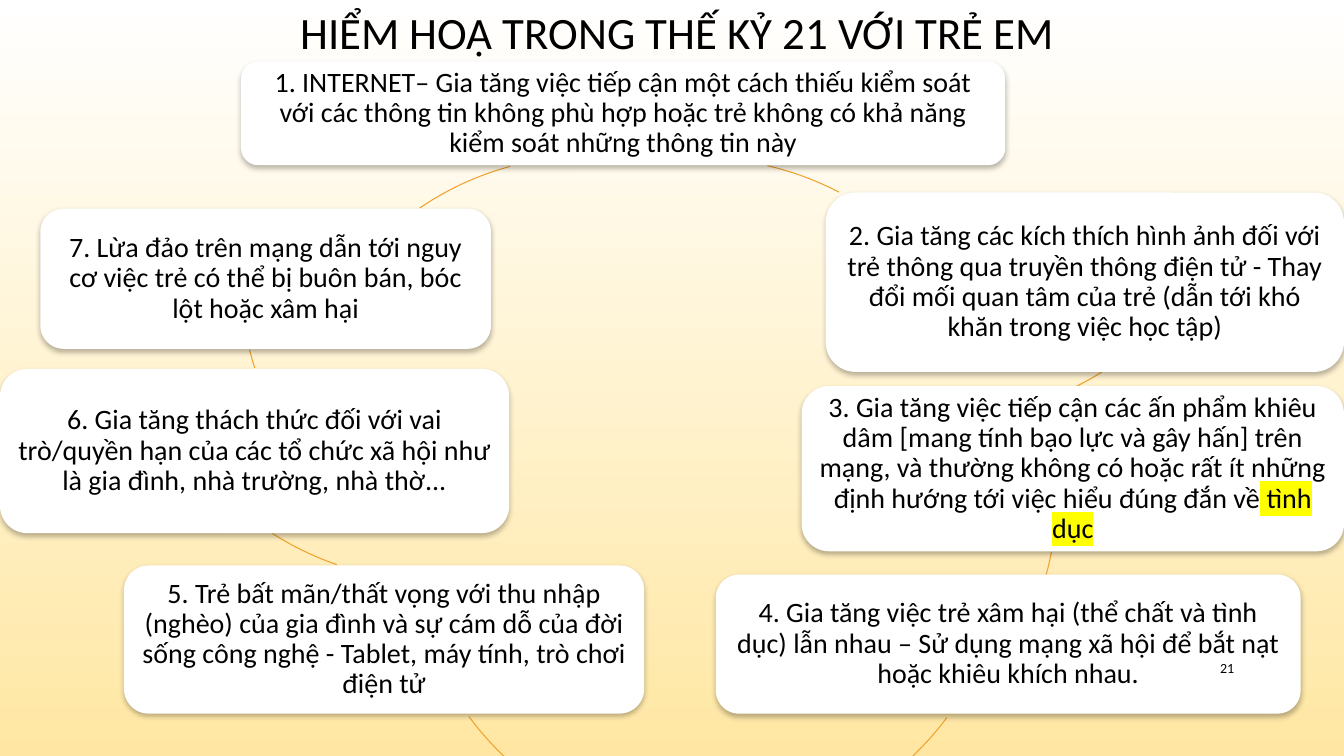
import math
from dataclasses import dataclass

from lxml import etree
from pptx import Presentation
from pptx.dml.color import RGBColor
from pptx.enum import shapes, text
from pptx.oxml import ns
from pptx.util import Inches, Pt


@dataclass(frozen=True)
class Theme:
    font: str = "Calibri"
    ink: str = "000000"
    card: str = "FFFFFF"
    top: str = "FFFFFF"
    base: str = "FFE7A3"
    line: str = "F0A22E"
    mark: str = "FFFF00"
    head: int = 32
    body: int = 20
    foot: int = 10


THEME = Theme()
RING = 5.89

CARDS = [
    ((2.39, 0.61, 7.58, 1.03), [
        ("1. INTERNET– Gia tăng việc tiếp cận một cách thiếu kiểm soát với các thông tin "
         "không phù hợp hoặc trẻ không có khả năng kiểm soát những thông tin này", False)]),
    ((8.19, 1.91, 5.14, 1.78), [
        ("2. Gia tăng các kích thích hình ảnh đối với trẻ thông qua truyền thông điện tử - "
         "Thay đổi mối quan tâm của trẻ (dẫn tới khó khăn trong việc học tập)", False)]),
    ((7.95, 3.83, 5.38, 1.64), [
        ("3. Gia tăng việc tiếp cận các ấn phẩm khiêu dâm [mang tính bạo lực và gây hấn] "
         "trên mạng, và thường không có hoặc rất ít những định hướng tới việc hiểu "
         "đúng đắn về", False),
        (" tình dục", True)]),
    ((7.1, 5.7, 5.8, 1.38), [
        ("4. Gia tăng việc trẻ xâm hại (thể chất và tình dục) lẫn nhau – Sử dụng mạng "
         "xã hội để bắt nạt hoặc khiêu khích nhau.", False)]),
    ((1.23, 5.61, 5.16, 1.47), [
        ("5. Trẻ bất mãn/thất vọng với thu nhập (nghèo) của gia đình và sự cám dỗ của "
         "đời sống công nghệ - Tablet, máy tính, trò chơi điện tử", False)]),
    ((0, 3.66, 5.05, 1.63), [
        ("6. Gia tăng thách thức đối với vai trò/quyền hạn của các tổ chức xã hội như là "
         "gia đình, nhà trường, nhà thờ...", False)]),
    ((0.4, 2.07, 4.47, 1.39), [
        ("7. Lừa đảo trên mạng dẫn tới nguy cơ việc trẻ có thể bị buôn bán, bóc lột "
         "hoặc xâm hại", False)]),
]

ARCS = [
    ((4.01, 1.57), (7.61, 1.65), (8.32, 1.91)),
    ((6.42, -1.75), (10.93, 3.69), (10.68, 3.83)),
    ((4.59, 1.98), (10.44, 5.48), (10.38, 5.7)),
    ((4.08, 2.42), (9.39, 7.12), (4.65, 7.11)),
    ((1.35, -0.13), (3.34, 5.6), (2.7, 5.29)),
    ((2.39, -0.18), (2.53, 3.65), (2.47, 3.47)),
    ((2.88, 1.55), (4.16, 2.06), (5.06, 1.65)),
]


def rgb(code):
    return RGBColor.from_string(code)


def add_run(para, words, size, marked=False):
    run = para.add_run()
    run.text = words
    run.font.size = Pt(size)
    run.font.color.rgb = rgb(THEME.ink)
    if marked:
        glow = etree.SubElement(run.font._element, ns.qn("a:highlight"))
        etree.SubElement(glow, ns.qn("a:srgbClr"), val=THEME.mark)
    run.font.name = THEME.font


def fill_text(shape, runs, size, align, space=None):
    frame = shape.text_frame
    frame.word_wrap = True
    frame.auto_size = text.MSO_AUTO_SIZE.NONE
    frame.vertical_anchor = text.MSO_ANCHOR.MIDDLE
    para = frame.paragraphs[0]
    para.alignment = align
    para.line_spacing = space
    for words, marked in runs:
        add_run(para, words, size, marked)
    return frame


def add_shade(shape):
    shape.shadow.inherit = False
    effects = shape.element.spPr.find(ns.qn("a:effectLst"))
    shade = etree.SubElement(
        effects, ns.qn("a:outerShdw"), blurRad=str(Pt(4)), dist=str(Pt(2)),
        dir="5400000", algn="ctr", rotWithShape="0")
    color = etree.SubElement(shade, ns.qn("a:srgbClr"), val=THEME.ink)
    etree.SubElement(color, ns.qn("a:alpha"), val="28000")


def add_card(slide, area, runs):
    card = slide.shapes.add_shape(
        shapes.MSO_SHAPE.ROUNDED_RECTANGLE, *map(Inches, area))
    card.fill.solid()
    card.fill.fore_color.rgb = rgb(THEME.card)
    card.line.fill.background()
    add_shade(card)
    frame = fill_text(card, runs, THEME.body, text.PP_ALIGN.CENTER, 0.9)
    frame.margin_left = frame.margin_right = Inches(0.08)
    frame.margin_top = frame.margin_bottom = Inches(0.08)


def add_arc(slide, corner, start, end):
    left, top = corner
    arc = slide.shapes.add_shape(
        shapes.MSO_SHAPE.ARC, *map(Inches, (left, top, RING, RING)))
    for spot, (x, y) in enumerate((start, end)):
        turn = math.atan2(y - top - RING / 2, x - left - RING / 2)
        arc.adjustments[spot] = math.degrees(turn) % 360 * 0.6
    arc.fill.background()
    arc.line.color.rgb = rgb(THEME.line)
    arc.line.width = Pt(0.75)
    arc.shadow.inherit = False


def add_title(slide, words):
    title = slide.shapes.title
    title.left, title.top, title.width, title.height = map(
        Inches, (0.11, 0.14, 13.22, 0.42))
    fill_text(title, [(words, False)], THEME.head, text.PP_ALIGN.CENTER, 0.9)


def add_page(slide, words):
    page = slide.shapes.add_textbox(*map(Inches, (11.5, 6.43, 0.84, 0.4)))
    fill_text(page, [(words, False)], THEME.foot, text.PP_ALIGN.RIGHT)


def set_back(slide):
    fill = slide.background.fill
    fill.gradient()
    fill.gradient_angle = 270
    for stop, code in zip(fill.gradient_stops, (THEME.top, THEME.base)):
        stop.color.rgb = rgb(code)


def main():
    deck = Presentation()
    deck.slide_width = Inches(13.33)
    deck.slide_height = Inches(7.5)
    slide = deck.slides.add_slide(deck.slide_layouts[5])
    set_back(slide)
    add_title(slide, "HIỂM HOẠ TRONG THẾ KỶ 21 VỚI TRẺ EM")
    for corner, start, end in ARCS:
        add_arc(slide, corner, start, end)
    for area, runs in CARDS:
        add_card(slide, area, runs)
    add_page(slide, "21")
    deck.save("out.pptx")


if __name__ == "__main__":
    main()
